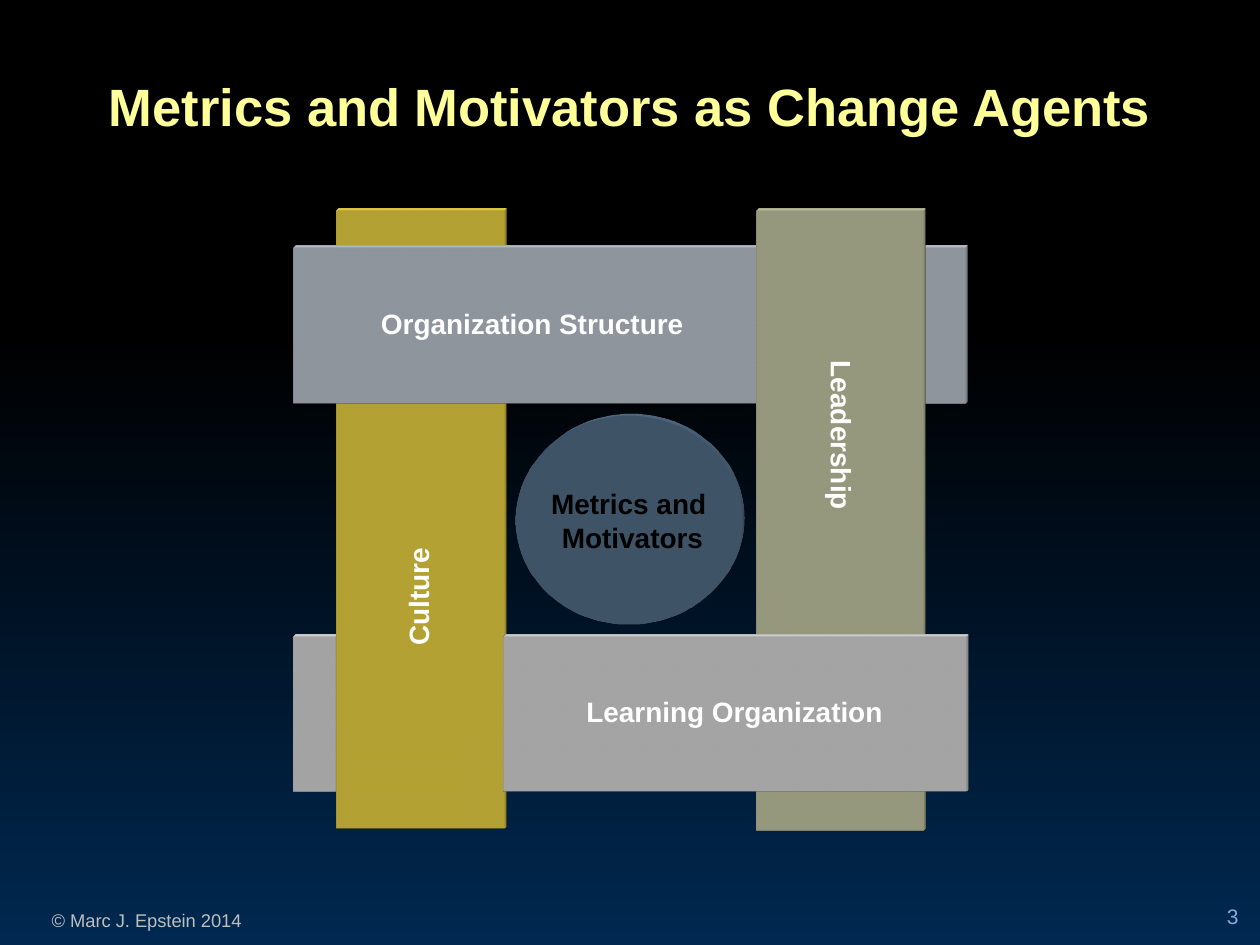
from dataclasses import dataclass

from lxml.etree import SubElement
from pptx import Presentation
from pptx.dml.color import RGBColor
from pptx.enum.shapes import MSO_SHAPE
from pptx.enum.text import MSO_ANCHOR, PP_ALIGN
from pptx.oxml.ns import qn
from pptx.util import Inches, Pt

BLACK = RGBColor(0x00, 0x00, 0x00)
NAVY = RGBColor(0x00, 0x28, 0x50)
WHITE = RGBColor(0xFF, 0xFF, 0xFF)
PALE_YELLOW = RGBColor(0xFF, 0xFF, 0x99)
SILVER = RGBColor(0xBF, 0xBF, 0xBF)
SKY = RGBColor(0x81, 0xAB, 0xE0)
GOLD = RGBColor(0xFF, 0xE5, 0x4B)
STEEL = RGBColor(0xCC, 0xD5, 0xDE)
SAGE = RGBColor(0xD5, 0xD9, 0xB1)
LIGHT_GREY = RGBColor(0xEA, 0xEA, 0xEA)
SLATE = RGBColor(0x5B, 0x78, 0x93)

EXTRUSION = Inches(0.05)


@dataclass
class Block:
    """One solid piece of the woven frame, in inches."""
    left: float
    top: float
    width: float
    height: float
    color: RGBColor
    kind: MSO_SHAPE = MSO_SHAPE.RECTANGLE


@dataclass
class Label:
    """A caption over one bar, in inches and degrees."""
    text: str
    left: float
    top: float
    width: float
    height: float
    rotation: int = 0


# Listed from back to front so that the bars weave over and under
BLOCKS = [
    Block(2.33, 5.05, 0.33, 1.23, LIGHT_GREY),
    Block(2.67, 3.2, 1.33, 3.38, GOLD),
    Block(2.67, 1.67, 1.33, 0.31, GOLD),
    Block(2.33, 1.97, 3.67, 1.23, STEEL),
    Block(7.33, 1.97, 0.33, 1.23, STEEL),
    Block(6, 1.67, 1.33, 3.38, SAGE),
    Block(6, 6.28, 1.33, 0.31, SAGE),
    Block(4, 5.05, 3.67, 1.23, LIGHT_GREY),
]
HUB = Block(4.09, 3.3, 1.8, 1.66, SLATE, MSO_SHAPE.OVAL)
LABELS = [
    Label("Leadership", 5.59, 2.79, 2.15, 1.33, 90),
    Label("Organization Structure", 2.56, 1.97, 3.33, 1.23),
    Label("Culture", 2.62, 4.07, 1.43, 1.33, 270),
    Label("Learning Organization", 4.11, 5.05, 3.44, 1.23),
]


def write_text(shape, text: str, *, size: float, color: RGBColor,
               bold: bool = False, align=PP_ALIGN.CENTER,
               anchor=MSO_ANCHOR.MIDDLE, wrap: bool = True,
               line_spacing: float = 1.0) -> None:
    frame = shape.text_frame
    frame.word_wrap = wrap
    frame.vertical_anchor = anchor
    for index, line in enumerate(text.split("\n")):
        para = frame.add_paragraph() if index else frame.paragraphs[0]
        para.alignment = align
        para.line_spacing = line_spacing
        span = para.add_run()
        span.text = line
        span.font.name = "Arial"
        span.font.size = Pt(size)
        span.font.bold = bold
        span.font.color.rgb = color


def add_box(page, left: float, top: float, width: float, height: float):
    return page.shapes.add_textbox(Inches(left), Inches(top),
                                   Inches(width), Inches(height))


def extrude(shape, color: RGBColor) -> None:
    """Give the shape a shallow oblique depth towards the top right."""
    properties = shape.element.spPr
    scene = SubElement(properties, qn("a:scene3d"))
    SubElement(scene, qn("a:camera"), prst="legacyObliqueTopRight")
    SubElement(scene, qn("a:lightRig"), rig="legacyFlat3", dir="r")
    solid = SubElement(properties, qn("a:sp3d"),
                       extrusionH=str(EXTRUSION), prstMaterial="legacyMatte")
    side = SubElement(solid, qn("a:extrusionClr"))
    SubElement(side, qn("a:srgbClr"), val=str(color))


def add_block(page, block: Block):
    shape = page.shapes.add_shape(block.kind, Inches(block.left), Inches(block.top),
                                  Inches(block.width), Inches(block.height))
    shape.shadow.inherit = False
    shape.fill.solid()
    shape.fill.fore_color.rgb = block.color
    shape.line.fill.background()
    extrude(shape, block.color)
    return shape


def add_background(page) -> None:
    fill = page.background.fill
    fill.gradient()
    fill.gradient_angle = 270
    for stop, position, color in zip(fill.gradient_stops, (0.35, 1), (BLACK, NAVY)):
        stop.position = position
        stop.color.rgb = color


def main() -> None:
    deck = Presentation()
    deck.slide_width, deck.slide_height = Inches(10), Inches(7.5)
    page = deck.slides.add_slide(deck.slide_layouts[6])
    add_background(page)

    # Footer
    write_text(add_box(page, -0.17, 7.17, 2.67, 0.28), "© Marc J. Epstein 2014",
               size=10.5, color=SILVER, anchor=MSO_ANCHOR.TOP)
    number = add_box(page, 9, 7.02, 0.83, 0.4)
    number.text_frame.margin_left = number.text_frame.margin_right = 0
    write_text(number, "3", size=12, color=SKY, align=PP_ALIGN.RIGHT,
               anchor=MSO_ANCHOR.BOTTOM)

    # Woven frame and its captions
    for block in BLOCKS:
        add_block(page, block)
    for label in LABELS:
        box = add_box(page, label.left, label.top, label.width, label.height)
        box.rotation = label.rotation
        write_text(box, label.text, size=16, color=WHITE, bold=True, line_spacing=0.9)

    # Hub in the middle
    write_text(add_block(page, HUB), "Metrics and\n Motivators",
               size=16, color=BLACK, bold=True, wrap=False)

    # Title
    write_text(add_box(page, 0.69, 0.33, 8.62, 1.01),
               "Metrics and Motivators as Change Agents",
               size=30, color=PALE_YELLOW, bold=True)

    deck.save("out.pptx")


if __name__ == "__main__":
    main()
